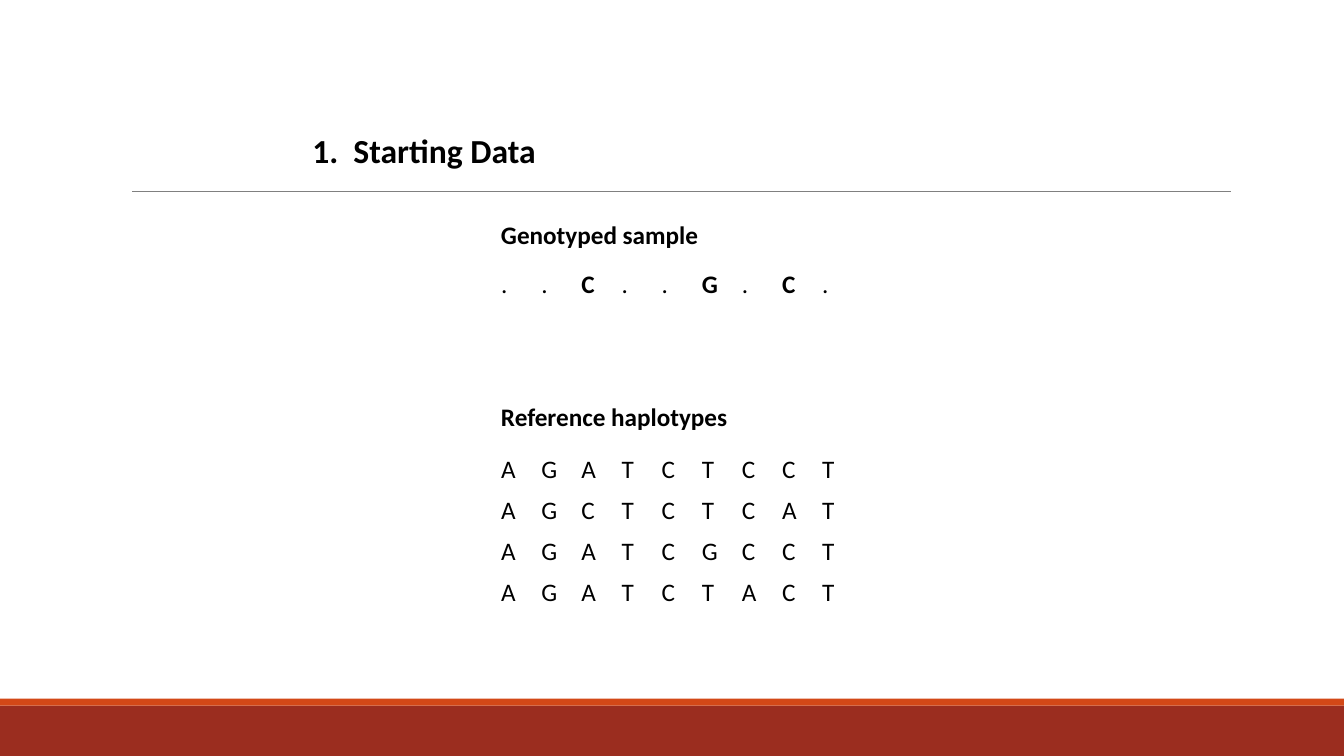
import pptx
import pptx.dml.color
import pptx.enum.shapes
import pptx.enum.text
import pptx.oxml.ns
import pptx.util
from lxml import etree

Pt = pptx.util.Pt


def color(hex_string):
    return pptx.dml.color.RGBColor.from_string(hex_string)


def add_text(paragraph, text, size, bold):
    run = paragraph.add_run()
    run.text = text
    run.font.name = "Calibri"
    run.font.size = Pt(size)
    run.font.bold = bold
    run.font.color.rgb = color("000000")


presentation = pptx.Presentation()
presentation.slide_width = Pt(960)
presentation.slide_height = Pt(540)
slide = presentation.slides.add_slide(presentation.slide_layouts[6])

footer_bands = [(504, 36, "9B2D1F"), (499, 5, "D34817")]
for top, height, fill in footer_bands:
    band = slide.shapes.add_shape(
        pptx.enum.shapes.MSO_SHAPE.RECTANGLE, 0, Pt(top), Pt(960), Pt(height))
    band.shadow.inherit = False
    band.fill.solid()
    band.fill.fore_color.rgb = color(fill)
    band.line.fill.background()

title_rule = slide.shapes.add_connector(
    pptx.enum.shapes.MSO_CONNECTOR.STRAIGHT, Pt(94.4), Pt(136.6), Pt(879), Pt(136.6))
title_rule.line.color.rgb = color("808080")
title_rule.line.width = Pt(0.5)
etree.SubElement(title_rule.element.spPr, pptx.oxml.ns.qn("a:effectLst"))

data_left = 350.8
column_width = 28.66
row_height = 29.16
sequence_tables = [
    (321.1, ["AGATCTCCT", "AGCTCTCAT", "AGATCGCCT", "AGATCTACT"], False),
    (189.2, ["..C..G.C."], True),
]
for top, sequences, bold_letters in sequence_tables:
    column_count = len(sequences[0])
    table = slide.shapes.add_table(
        len(sequences), column_count, Pt(data_left), Pt(top),
        Pt(column_width * column_count), Pt(row_height * len(sequences))).table
    table.first_row = False
    table.horz_banding = False
    for column in table.columns:
        column.width = Pt(column_width)
    for row, sequence in zip(table.rows, sequences):
        row.height = Pt(row_height)
        for cell, base in zip(row.cells, sequence):
            cell.fill.background()
            add_text(cell.text_frame.paragraphs[0], base, 18, bold_letters and base != ".")

headings = [
    ("Genotyped sample", data_left, 153.4, 158.4, 29, 18),
    ("Reference haplotypes", data_left, 283, 177, 29, 18),
    ("1.  Starting Data", 216, 89.3, 175.7, 36, 24),
]
for text, left, top, width, height, size in headings:
    heading = slide.shapes.add_textbox(Pt(left), Pt(top), Pt(width), Pt(height))
    heading.text_frame.word_wrap = False
    heading.text_frame.auto_size = pptx.enum.text.MSO_AUTO_SIZE.SHAPE_TO_FIT_TEXT
    add_text(heading.text_frame.paragraphs[0], text, size, True)

presentation.save("out.pptx")
